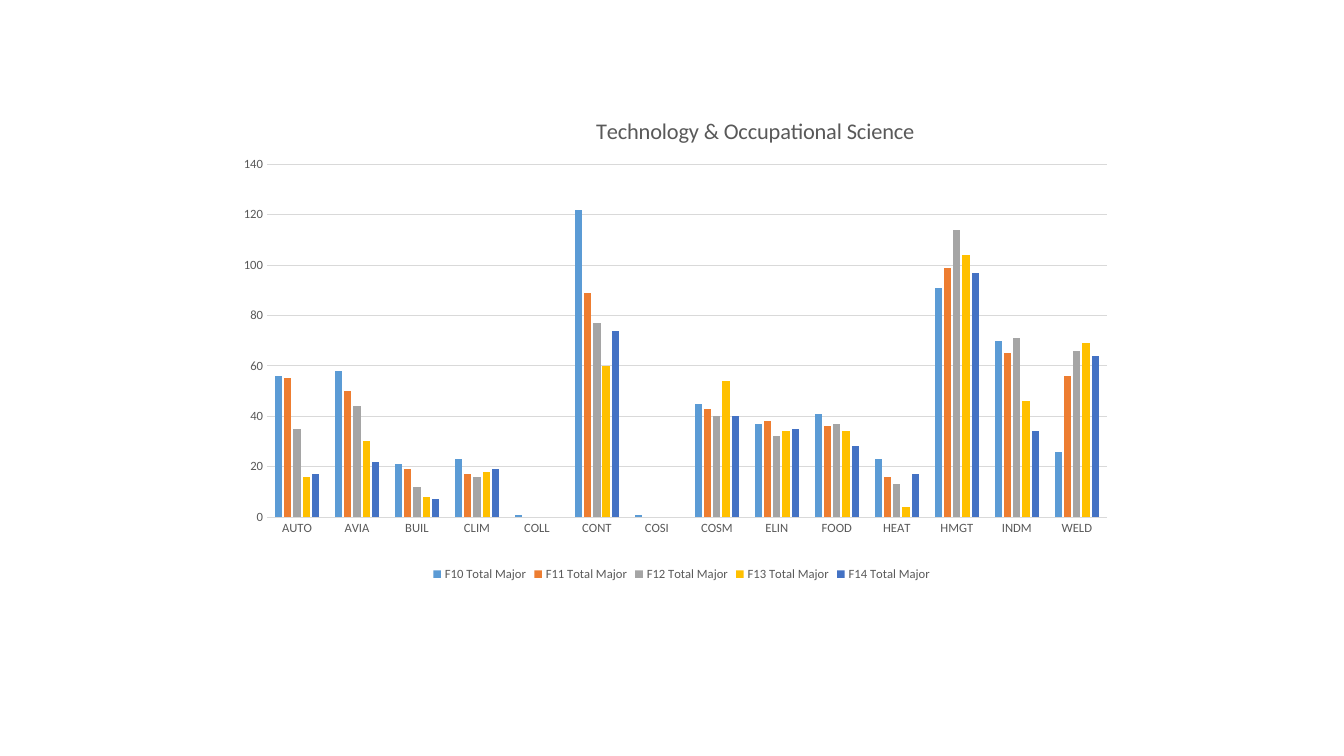
from lxml import etree
from pptx import Presentation
from pptx import util as u
from pptx.chart.data import CategoryChartData
from pptx.dml.color import RGBColor
from pptx.enum import chart as ch
from pptx.oxml.ns import qn

COLORS = {
    "text": "595959", "rule": "D9D9D9",
    "F10": "5B9BD5", "F11": "ED7D31", "F12": "A5A5A5", "F13": "FFC000", "F14": "4472C4",
}
PROGRAMS = ["AUTO", "AVIA", "BUIL", "CLIM", "COLL", "CONT", "COSI",
            "COSM", "ELIN", "FOOD", "HEAT", "HMGT", "INDM", "WELD"]
MAJORS = {
    "F10": [56, 58, 21, 23, 1, 122, 1, 45, 37, 41, 23, 91, 70, 26],
    "F11": [55, 50, 19, 17, None, 89, None, 43, 38, 36, 16, 99, 65, 56],
    "F12": [35, 44, 12, 16, None, 77, None, 40, 32, 37, 13, 114, 71, 66],
    "F13": [16, 30, 8, 18, None, 60, None, 54, 34, 34, 4, 104, 46, 69],
    "F14": [17, 22, 7, 19, None, 74, None, 40, 35, 28, 17, 97, 34, 64],
}


def style_font(font, size):
    font.name, font.size, font.bold = "Calibri", u.Pt(size), False
    font.color.rgb = RGBColor.from_string(COLORS["text"])


def set_layout(part, **settings):
    """Fix a chart part's place, in shares of the chart's size."""
    layout = part.find(qn("c:layout"))
    if layout is None:
        layout = etree.Element(qn("c:layout"))
        part.insert(len(part.findall(qn("c:tx"))), layout)
    manual = etree.SubElement(layout, qn("c:manualLayout"))
    for tag, value in settings.items():
        etree.SubElement(manual, qn("c:" + tag)).set("val", str(value))


prs = Presentation()
prs.slide_width, prs.slide_height = u.Inches(13.33), u.Inches(7.5)
slide = prs.slides.add_slide(prs.slide_layouts[6])

enrolment = CategoryChartData(number_format="#,##0")
enrolment.categories = PROGRAMS
for term, counts in MAJORS.items():
    enrolment.add_series(f"{term} Total Major", counts)

chart = slide.shapes.add_chart(
    ch.XL_CHART_TYPE.COLUMN_CLUSTERED,
    u.Inches(2.32), u.Inches(0.96), u.Inches(8.88), u.Inches(4.85), enrolment).chart
style_font(chart.font, 9)

# Title, set right of centre
heading = chart.chart_title.text_frame.paragraphs[0].add_run()
heading.text = "Technology & Occupational Science"
style_font(heading.font, 16)
chart.chart_title.include_in_layout = False
set_layout(chart.chart_title._element, xMode="edge", yMode="edge", x=0.4, y=0.03)

# Columns
set_layout(chart._chartSpace.chart.plotArea, layoutTarget="inner",
           xMode="edge", yMode="edge", x=0.037, y=0.138, w=0.938, h=0.722)
columns = chart.plots[0]
columns.gap_width, columns.overlap = 219, -27
columns.vary_by_categories = False
for term, series in zip(MAJORS, columns.series):
    series.invert_if_negative = False
    series.format.fill.solid()
    series.format.fill.fore_color.rgb = RGBColor.from_string(COLORS[term])

# Axes
programs, count = chart.category_axis, chart.value_axis
count.minimum_scale, count.maximum_scale, count.major_unit = 0, 140, 20
count.tick_labels.number_format = "#,##0"
count.tick_labels.number_format_is_linked = False
for axis in (programs, count):
    axis.major_tick_mark = axis.minor_tick_mark = ch.XL_TICK_MARK.NONE
    style_font(axis.tick_labels.font, 9)
for line in (programs.format.line, count.major_gridlines.format.line):
    line.width = u.Pt(0.75)
    line.color.rgb = RGBColor.from_string(COLORS["rule"])
count.format.line.fill.background()

chart.has_legend = True
chart.legend.position = ch.XL_LEGEND_POSITION.BOTTOM
chart.legend.include_in_layout = False
style_font(chart.legend.font, 9)

prs.save("out.pptx")
